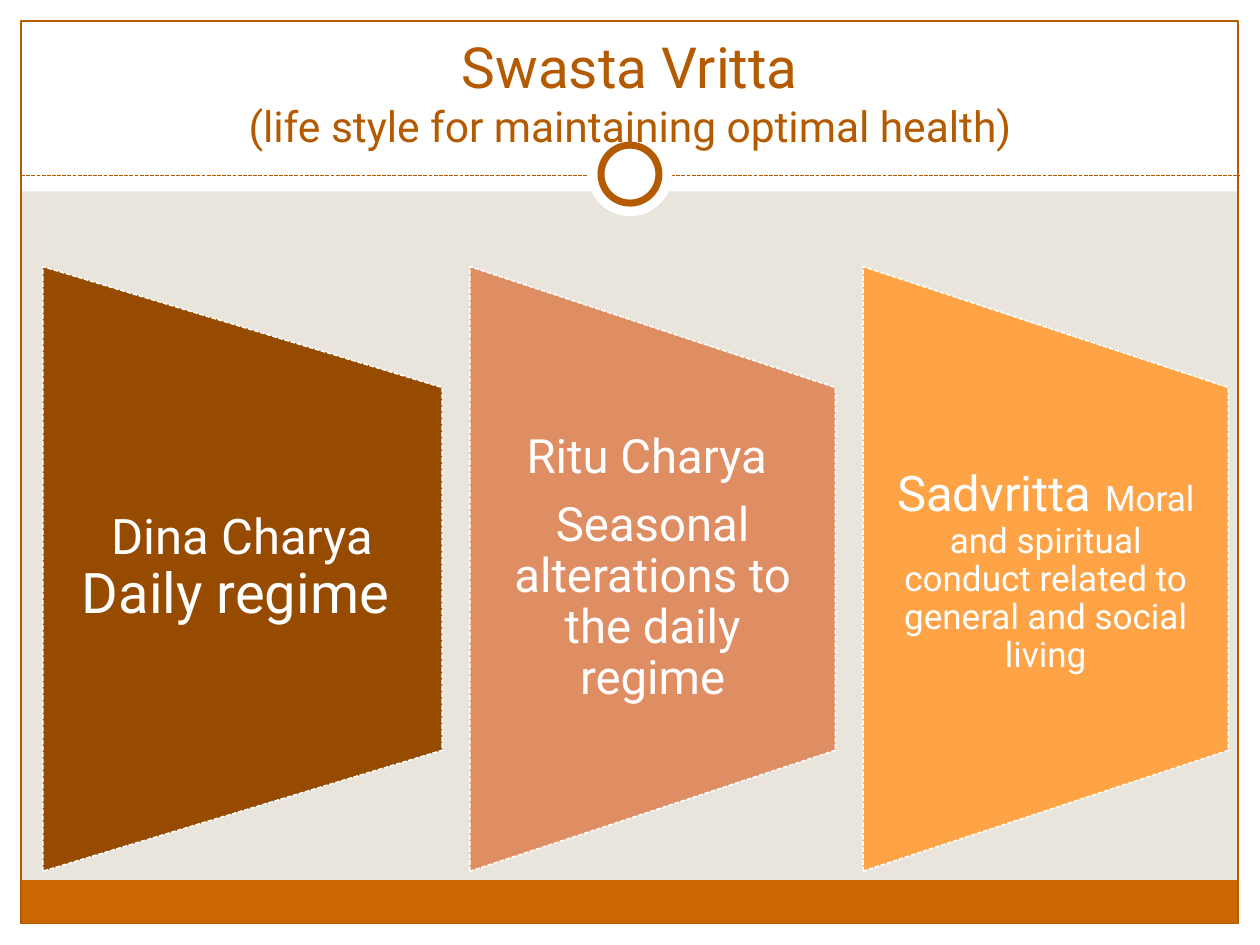
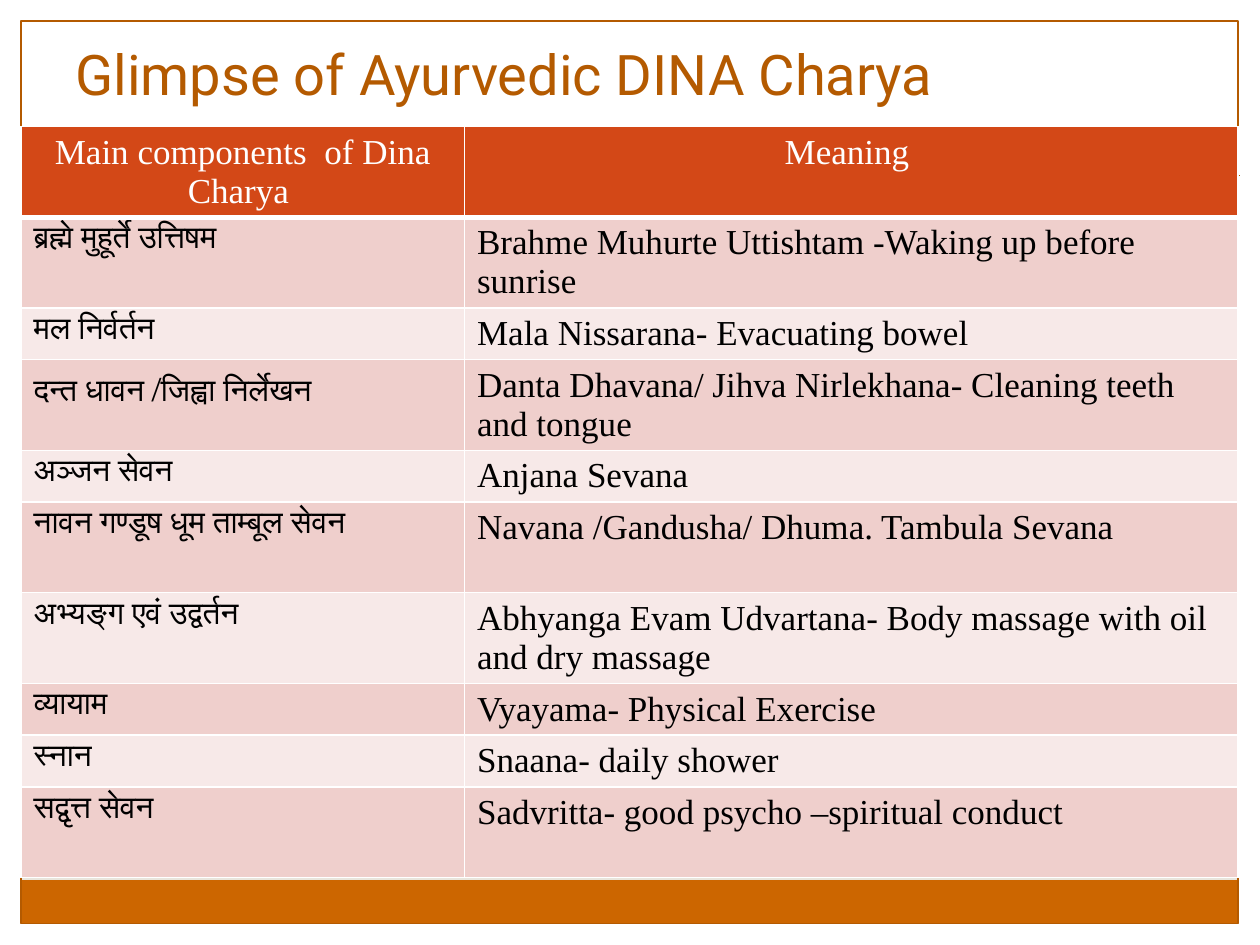
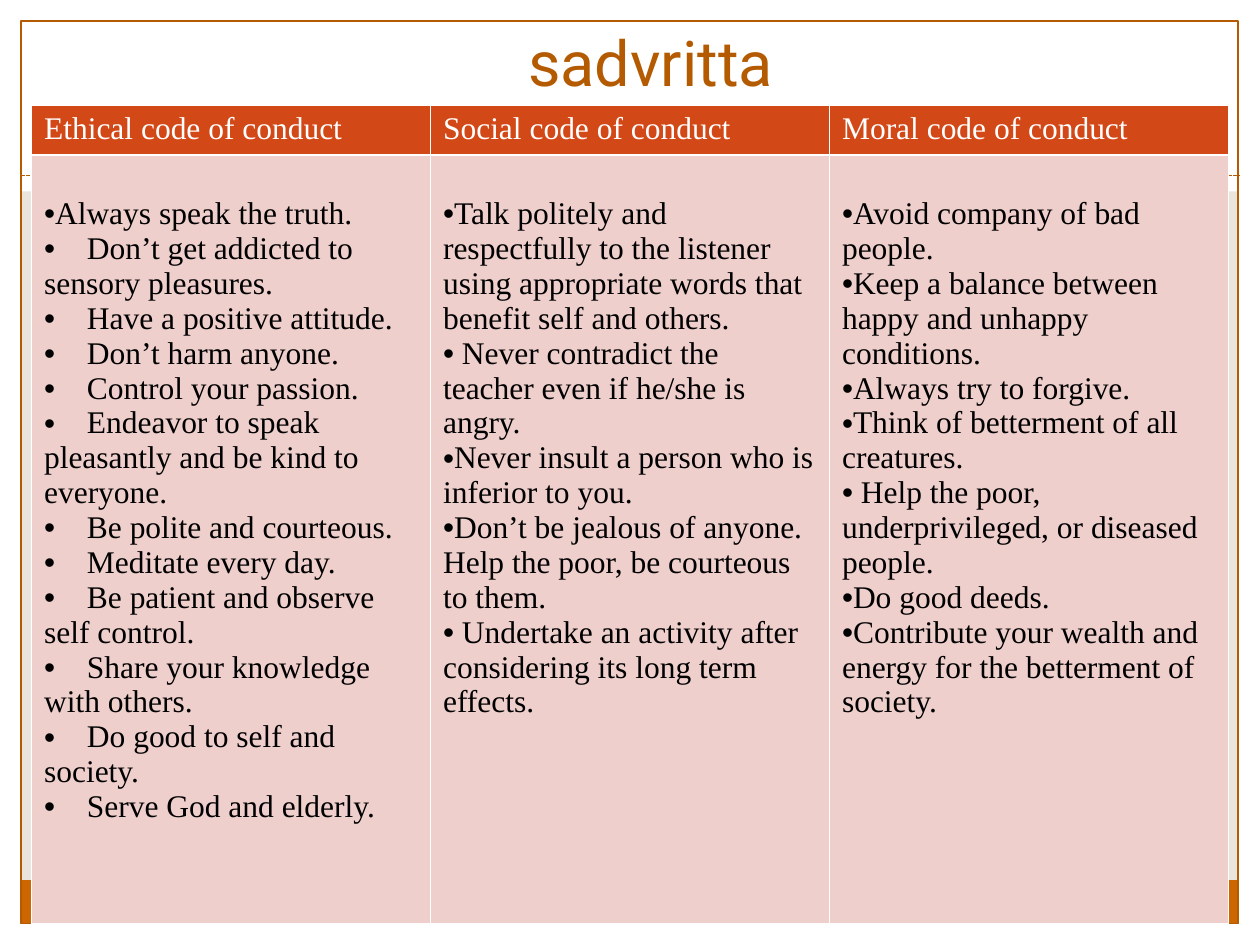
from dataclasses import dataclass

from lxml.etree import SubElement
from pptx import Presentation
from pptx.dml.color import RGBColor
from pptx.enum.dml import MSO_LINE
from pptx.enum.shapes import MSO_CONNECTOR, MSO_SHAPE as Kind
from pptx.enum.text import MSO_ANCHOR as Anchor, PP_ALIGN as Align
from pptx.oxml.ns import qn
from pptx.util import Inches, Pt


@dataclass(frozen=True)
class Theme:
    sand: str = "E9E5DC"
    white: str = "FFFFFF"
    black: str = "000000"
    bar: str = "CC6600"
    rust: str = "B45A00"
    header: str = "D34817"
    bands: tuple = ("EFCFCC", "F7E9E8")
    heading: str = "Roboto"
    body: str = "Times New Roman"
    sanskrit: str = "TeX Gyre Schola"
    table_size: float = 20
    list_size: float = 18


THEME = Theme()
WIDTH, HEIGHT = Inches(10), Inches(7.5)
SIDE, EDGE = 1.67, 2.22
INNER, RULE = 96.6, 18.6

REGIMES = [
    (31.7, "974B00", [[("Dina Charya ", 28), ("Daily regime ", 32)]]),
    (29, "DF8E64", [[("Ritu Charya ", 27)],
                    [("Seasonal alterations to the daily regime", 27)]]),
    (29, "FFA347", [[("Sadvritta", 28), (" ", 32),
                     ("Moral and spiritual conduct related to general and social living", 20)]]),
]

DAILY_HEADER = ("Main components  of Dina Charya ", "Meaning ")
DAILY_ROWS = [
    ("ब्रह्मे मुहूर्ते उत्तिषम", "Brahme Muhurte Uttishtam -Waking up before sunrise", "tall"),
    ("मल निर्वर्तन", "Mala Nissarana- Evacuating bowel", "short"),
    ("दन्त धावन /जिह्वा निर्लेखन",
     "Danta Dhavana/ Jihva Nirlekhana- Cleaning teeth and tongue", "tall"),
    ("अञ्जन सेवन", "Anjana Sevana", "short"),
    ("नावन गण्डूष धूम ताम्बूल सेवन", "Navana /Gandusha/ Dhuma. Tambula Sevana", "tall"),
    ("अभ्यङ्ग एवं उद्वर्तन",
     "Abhyanga Evam Udvartana- Body massage with oil and dry massage", "tall"),
    ("व्यायाम", "Vyayama- Physical Exercise", "short"),
    ("स्नान", "Snaana- daily shower", "short"),
    ("सद्वृत्त सेवन", "Sadvritta- good psycho –spiritual conduct", "tall"),
]
ROW_SHARES = {"tall": 9.6, "short": 5.47}

CONDUCT = {
    "Ethical code of conduct": [
        "Always speak the truth.",
        "\tDon’t get addicted to sensory pleasures.",
        "\tHave a positive attitude.",
        "\tDon’t harm anyone.",
        "\tControl your passion.",
        "\tEndeavor to speak pleasantly and be kind to everyone.",
        "\tBe polite and courteous.",
        "\tMeditate every day.",
        "\tBe patient and observe self control.",
        "\tShare your knowledge with others.",
        "\tDo good to self and society.",
        "\tServe God and elderly.",
    ],
    "Social code of conduct": [
        "Talk politely and respectfully to the listener using appropriate words "
        "that benefit self and others.",
        " Never contradict the teacher even if he/she is angry.",
        "Never insult a person who is inferior to you.",
        "Don’t be jealous of anyone. Help the poor, be courteous to them.",
        " Undertake an activity after considering its long term effects.",
    ],
    "Moral code of conduct": [
        "Avoid company of bad people.",
        "Keep a balance between happy and unhappy conditions.",
        "Always try to forgive.",
        "Think of betterment of all creatures.",
        " Help the poor, underprivileged, or diseased people.",
        "Do good deeds.",
        "Contribute your wealth and energy for the betterment of society.",
    ],
}


def across(share):
    return round(WIDTH * share / 100)


def down(share):
    return round(HEIGHT * share / 100)


def place(left, top, width, height):
    return across(left), down(top), across(width), down(height)


def apply(target, **values):
    for name, value in values.items():
        setattr(target, name, value)


def paint(fill, color):
    fill.solid()
    fill.fore_color.rgb = RGBColor.from_string(color)


def stroke(line, color, width, dash=None):
    paint(line.fill, color)
    apply(line, width=Pt(width), dash_style=dash)


def add_figure(page, kind, area, fill=None, line=None):
    shape = page.shapes.add_shape(kind, *area)
    shape.shadow.inherit = False
    if fill:
        paint(shape.fill, fill)
    else:
        shape.fill.background()
    if line:
        stroke(shape.line, *line)
    else:
        shape.line.fill.background()
    return shape


def add_span(para, text, font, size, color):
    span = para.add_run()
    span.text = text
    apply(span.font, name=font, size=Pt(size), bold=False)
    span.font.color.rgb = RGBColor.from_string(color)


def write(frame, paras, font, color, **layout):
    for index, spans in enumerate(paras):
        para = frame.paragraphs[0] if index == 0 else frame.add_paragraph()
        apply(para, **layout)
        for text, size in spans:
            add_span(para, text, font, size, color)


def add_text(page, area, paras, color, anchor, inset=None, **layout):
    box = page.shapes.add_textbox(*area)
    frame = box.text_frame
    apply(frame, word_wrap=True, vertical_anchor=anchor)
    if inset is not None:
        apply(frame, margin_left=inset, margin_right=inset, margin_top=0, margin_bottom=0)
    write(frame, paras, THEME.heading, color, **layout)
    return box


def add_disc(page, diameter, line=None):
    size = across(diameter)
    area = (WIDTH - size) // 2, down(18.43) - size // 2, size, size
    add_figure(page, Kind.OVAL, area, THEME.white, line)


def add_page(deck, title, area, align, outline=None):
    page = deck.slides.add_slide(deck.slide_layouts[6])
    paint(page.background.fill, THEME.sand)
    margins = [(0, 100 - EDGE, 100, EDGE), (0, 0, 100, 20.27),
               (0, 0, SIDE, 100), (100 - SIDE, 0, SIDE, 100)]
    for margin in margins:
        add_figure(page, Kind.RECTANGLE, place(*margin), THEME.white)
    add_figure(page, Kind.RECTANGLE, place(SIDE, 93.15, INNER, 4.58), THEME.bar)
    add_figure(page, Kind.RECTANGLE, place(SIDE, EDGE, INNER, 95.5),
               line=(THEME.rust, 0.75))
    rule = page.shapes.add_connector(MSO_CONNECTOR.STRAIGHT, across(SIDE), down(RULE),
                                     across(100 - SIDE), down(RULE))
    stroke(rule.line, THEME.rust, 0.75, MSO_LINE.SQUARE_DOT)
    SubElement(rule._element.spPr, qn("a:effectLst"))
    add_disc(page, 6.7)
    add_disc(page, 4.6, (THEME.rust, 4))
    box = add_text(page, place(*area), title, THEME.rust, Anchor.BOTTOM, alignment=align)
    if outline:
        stroke(box.line, *outline)
    return page


def style_cell(cell, fill, bottom=1):
    props = cell._tc.get_or_add_tcPr()
    for side, width in (("L", 1), ("R", 1), ("T", 1), ("B", bottom)):
        border = SubElement(props, qn(f"a:ln{side}"), w=str(Pt(width)))
        color = SubElement(border, qn("a:solidFill"))
        SubElement(color, qn("a:srgbClr"), val=THEME.white)
    paint(cell.fill, fill)
    cell.margin_bottom = 0


def add_grid(page, left, top, columns, rows):
    area = place(left, top, sum(columns), sum(rows))
    table = page.shapes.add_table(len(rows), len(columns), *area).table
    for column, share in zip(table.columns, columns):
        column.width = across(share)
    for row, share in zip(table.rows, rows):
        row.height = down(share)
    return table


def add_bullet(para):
    props = para._p.get_or_add_pPr()
    for name in ("marL", "indent"):
        props.set(name, "0")
    SubElement(props, qn("a:buFont"), typeface="Arial")
    SubElement(props, qn("a:buChar"), char="•")
    stops = SubElement(props, qn("a:tabLst"))
    SubElement(stops, qn("a:tab"), pos=str(Inches(0.34)), algn="l")


def build_regimes(deck):
    title = [[("Swasta Vritta", 32.4)], [("(life style for maintaining optimal health)", 24.3)]]
    page = add_page(deck, title, (5, 3.33, 90, 13.33), Align.CENTER)
    left, top, length, gap = 3.4, 28.2, 64, 2.2
    for width, color, paras in REGIMES:
        long_side, short_side = down(length), across(width)
        middle_x, middle_y = across(left + width / 2), down(top + length / 2)
        area = middle_x - long_side // 2, middle_y - short_side // 2, long_side, short_side
        panel = add_figure(page, Kind.FLOWCHART_MANUAL_OPERATION, area, color,
                           (THEME.white, 0.9, MSO_LINE.SQUARE_DOT))
        panel.rotation = 270
        add_text(page, place(left, top + length / 5, width, length * 3 / 5), paras,
                 THEME.white, Anchor.MIDDLE, Inches(0.19),
                 alignment=Align.CENTER, line_spacing=0.9, space_after=Pt(9.4))
        left += width + gap


def build_daily(deck):
    page = add_page(deck, [[("Glimpse of Ayurvedic DINA Charya", 32)]],
                    (5, EDGE, 90, 9.78), Align.LEFT)
    heights = [ROW_SHARES["tall"]] + [ROW_SHARES[size] for *_, size in DAILY_ROWS]
    table = add_grid(page, SIDE, 13.4, [35.2, 61.4], heights)
    for index, text in enumerate(DAILY_HEADER):
        cell = table.cell(0, index)
        style_cell(cell, THEME.header, 3)
        write(cell.text_frame, [[(text, THEME.table_size)]], THEME.body, THEME.white,
              alignment=Align.CENTER)
    styles = [(THEME.sanskrit, THEME.list_size), (THEME.body, THEME.table_size)]
    for number, (*texts, _) in enumerate(DAILY_ROWS):
        for index, (text, (font, size)) in enumerate(zip(texts, styles)):
            cell = table.cell(number + 1, index)
            style_cell(cell, THEME.bands[number % 2])
            write(cell.text_frame, [[(text, size)]], font, THEME.black)


def build_conduct(deck):
    page = add_page(deck, [[("sadvritta", 36)]], (22.5, 3.4, 58.3, 7.73), Align.CENTER,
                    (THEME.white, 0.75))
    table = add_grid(page, 2.5, 11.11, [95 / len(CONDUCT)] * len(CONDUCT), [5.3, 81.3])
    for index, (heading, rules) in enumerate(CONDUCT.items()):
        head, body = table.cell(0, index), table.cell(1, index)
        style_cell(head, THEME.header)
        style_cell(body, THEME.bands[0])
        write(head.text_frame, [[(heading, THEME.list_size)]], THEME.body, THEME.white)
        write(body.text_frame, [[(rule, THEME.list_size)] for rule in rules],
              THEME.body, THEME.black)
        body.margin_top = Inches(0.33)
        for para in body.text_frame.paragraphs:
            add_bullet(para)


def main():
    deck = Presentation()
    apply(deck, slide_width=WIDTH, slide_height=HEIGHT)
    for build in (build_regimes, build_daily, build_conduct):
        build(deck)
    deck.save("out.pptx")


if __name__ == "__main__":
    main()
